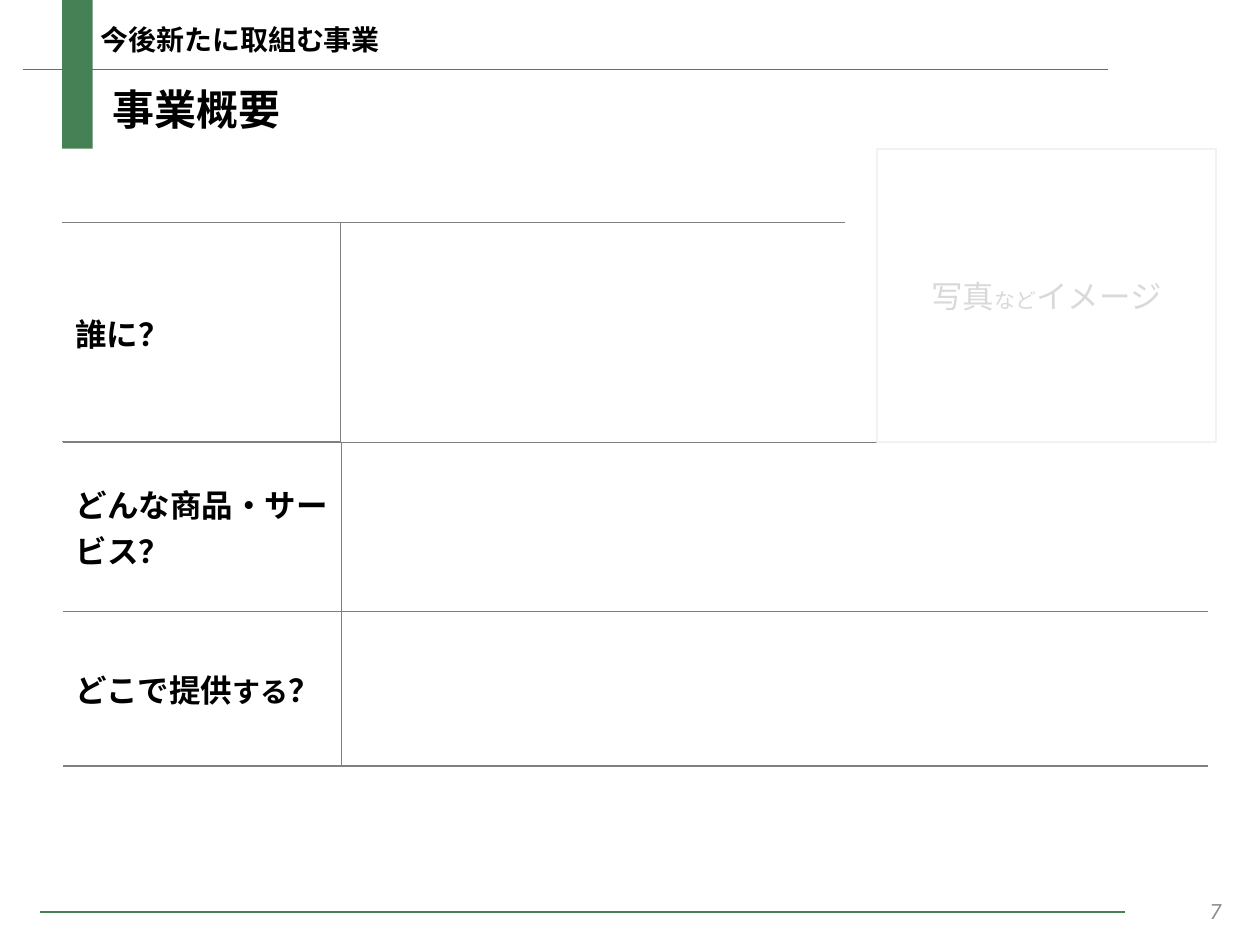
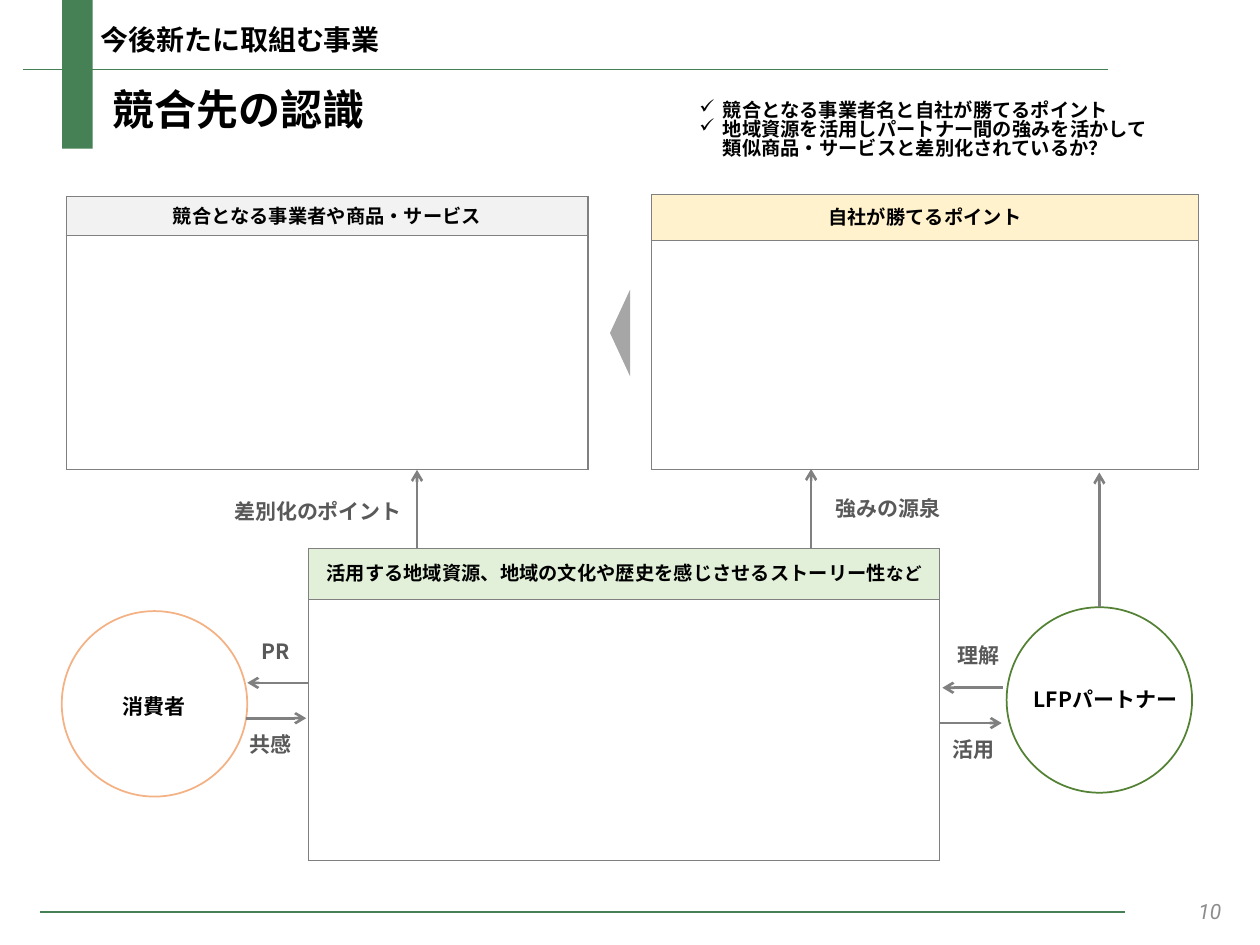
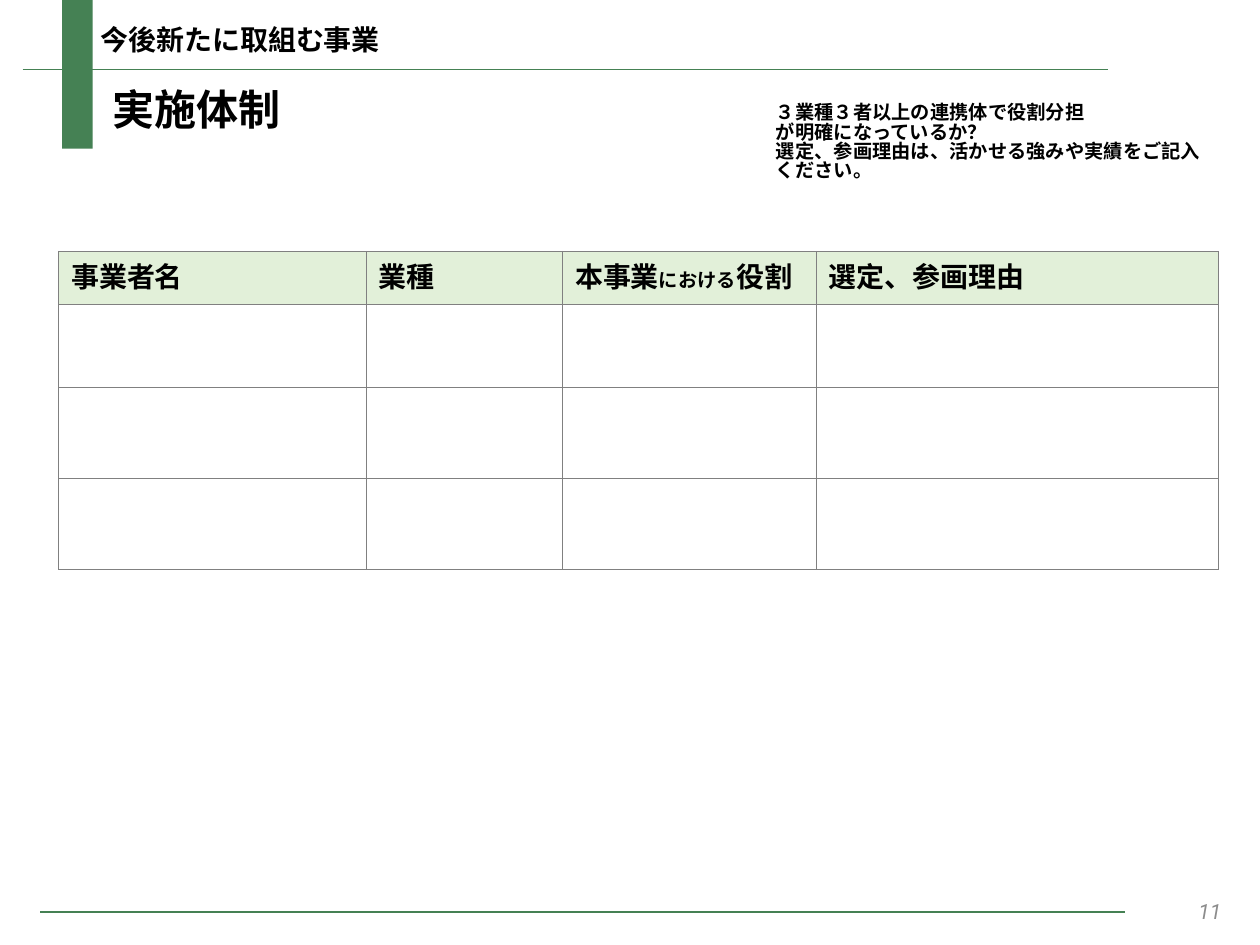
from dataclasses import dataclass
from typing import Any, NamedTuple

from lxml.etree import SubElement
from pptx import Presentation
from pptx.dml.color import RGBColor
from pptx.enum.shapes import MSO_CONNECTOR, MSO_SHAPE
from pptx.enum.text import MSO_ANCHOR, MSO_AUTO_SIZE, PP_ALIGN
from pptx.oxml.ns import qn
from pptx.util import Pt

COLORS = {
    "green": "458154",
    "pale_green": "E2F0D9",
    "pale_yellow": "FFF2CC",
    "pale_gray": "F2F2F2",
    "ghost": "D9D9D9",
    "arrowhead": "A6A6A6",
    "rule": "808080",
    "page": "8C8C8C",
    "label": "595959",
    "black": "000000",
    "consumer": "F4B183",
    "partner": "548235",
}
JP_FONT = "Noto Sans CJK JP"
TIGHT = 0.83
SECTION = "今後新たに取組む事業"
SIDES = {"l": "a:lnL", "r": "a:lnR", "t": "a:lnT", "b": "a:lnB"}


class Box(NamedTuple):
    left: float
    top: float
    width: float
    height: float


class Run(NamedTuple):
    text: str
    size: float


@dataclass
class Style:
    color: str = "black"
    font: str = JP_FONT
    bold: bool = True
    italic: bool = False
    align: Any = PP_ALIGN.LEFT
    spacing: float = TIGHT
    bullet: str = ""


@dataclass
class Label:
    box: Box
    paragraphs: list[list[Run]]
    style: Style


@dataclass
class Grid:
    left: float
    top: float
    cols: list[float]
    rows: list[float]
    texts: list[list[list[Run]]]
    borders: list[list[str]]
    style: Style
    header_fill: str = ""


class Arrow(NamedTuple):
    x1: float
    y1: float
    x2: float
    y2: float


def rgb(name: str) -> RGBColor:
    return RGBColor.from_string(COLORS[name])


def set_all(target: Any, values: dict[str, Any]) -> None:
    for name, value in values.items():
        setattr(target, name, value)


def write_paragraph(p: Any, runs: list[Run], style: Style) -> None:
    set_all(p, {"alignment": style.align, "line_spacing": style.spacing})
    if style.bullet:
        pPr = p._p.get_or_add_pPr()
        indent = Pt(13.5)
        pPr.set("marL", str(indent))
        pPr.set("indent", str(-indent))
        SubElement(pPr, qn("a:buChar")).set("char", style.bullet)
    for run in runs:
        r = p.add_run()
        r.text = run.text
        set_all(r.font, {"name": style.font, "size": Pt(run.size),
                         "bold": style.bold, "italic": style.italic})
        r.font.color.rgb = rgb(style.color)
        SubElement(r._r.get_or_add_rPr(), qn("a:ea")).set("typeface", style.font)


def write_text(tf: Any, paragraphs: list[list[Run]], style: Style) -> None:
    for i, runs in enumerate(paragraphs):
        p = tf.add_paragraph() if i else tf.paragraphs[0]
        write_paragraph(p, runs, style)


def add_label(s: Any, label: Label, anchor: Any = MSO_ANCHOR.TOP) -> None:
    tf = s.shapes.add_textbox(*map(Pt, label.box)).text_frame
    set_all(tf, {"word_wrap": True, "vertical_anchor": anchor,
                 "auto_size": MSO_AUTO_SIZE.NONE})
    write_text(tf, label.paragraphs, label.style)


def add_figure(s: Any, kind: Any, box: Box, fill: str = "", line: str = "") -> Any:
    sp = s.shapes.add_shape(kind, *map(Pt, box))
    sp.shadow.inherit = False
    if fill:
        sp.fill.solid()
        sp.fill.fore_color.rgb = rgb(fill)
    else:
        sp.fill.background()
    if line:
        sp.line.color.rgb = rgb(line)
        sp.line.width = Pt(1)
    else:
        sp.line.fill.background()
    return sp


def add_line(s: Any, ends: Arrow, color: str, width: float, arrow: bool = False) -> Any:
    c = s.shapes.add_connector(MSO_CONNECTOR.STRAIGHT, *map(Pt, ends))
    c.line.color.rgb = rgb(color)
    c.line.width = Pt(width)
    if arrow:
        SubElement(c.line._get_or_add_ln(), qn("a:tailEnd")).set("type", "arrow")
    SubElement(c._element.spPr, qn("a:effectLst"))
    return c


def set_borders(cell: Any, shown: str) -> None:
    tcPr = cell._tc.get_or_add_tcPr()
    for side, tag in SIDES.items():
        ln = SubElement(tcPr, qn(tag))
        ln.set("w", str(Pt(0.75)))
        if side in shown:
            fill = SubElement(ln, qn("a:solidFill"))
            SubElement(fill, qn("a:srgbClr")).set("val", COLORS["rule"])
        else:
            SubElement(ln, qn("a:noFill"))


def add_grid(s: Any, grid: Grid) -> None:
    box = Box(grid.left, grid.top, sum(grid.cols), sum(grid.rows))
    table = s.shapes.add_table(len(grid.rows), len(grid.cols), *map(Pt, box)).table
    set_all(table, {"first_row": False, "horz_banding": False})
    for col, width in zip(table.columns, grid.cols):
        col.width = Pt(width)
    for i, (row, height) in enumerate(zip(table.rows, grid.rows)):
        row.height = Pt(height)
        for j, cell in enumerate(row.cells):
            set_borders(cell, grid.borders[i][j])
            cell.vertical_anchor = MSO_ANCHOR.MIDDLE
            if grid.header_fill and i == 0:
                cell.fill.solid()
                cell.fill.fore_color.rgb = rgb(grid.header_fill)
            else:
                cell.fill.background()
            if i < len(grid.texts) and j < len(grid.texts[i]):
                write_text(cell.text_frame, [grid.texts[i][j]], grid.style)


def boxed(rows: int, cols: int) -> list[list[str]]:
    return [["lrtb"] * cols for _ in range(rows)]


def add_base(prs: Any, title: str, page: int) -> Any:
    s = prs.slides.add_slide(prs.slide_layouts[6])
    add_figure(s, MSO_SHAPE.RECTANGLE, Box(35.5, 0, 17.5, 85), fill="green")
    for left, y in ((13, 39.6), (23, 521.2)):
        add_line(s, Arrow(left, y, left + 620, y), "green", 0.75)
    number = Style("page", "Roboto", False, True, PP_ALIGN.RIGHT, 1)
    add_label(s, Label(Box(543, 506, 162, 29), [[Run(str(page), 12)]], number),
              MSO_ANCHOR.MIDDLE)
    add_label(s, Label(Box(50.5, 12.5, 271, 27), [[Run(SECTION, 16)]], Style()))
    add_label(s, Label(Box(57.5, 49, 236, 36), [[Run(title, 24)]], Style()))
    return s


def build_overview(prs: Any) -> None:
    s = add_base(prs, "事業概要", 7)
    style = Style(spacing=1)
    add_grid(s, Grid(36, 252.7, [159, 495.5], [96.5, 88.5],
                     [[[Run("どんな商品・サービス？", 18)]],
                      [[Run("どこで提供", 18), Run("する", 16), Run("？", 18)]]],
                     [["trb", "ltb"]] * 2, style))
    add_grid(s, Grid(35.7, 127.2, [159, 288], [125.3],
                     [[[Run("誰に？", 18)]]], [["trb", "lt"]], style))
    sp = add_figure(s, MSO_SHAPE.RECTANGLE, Box(501, 85, 194, 167.8), line="pale_gray")
    sp.text_frame.vertical_anchor = MSO_ANCHOR.MIDDLE
    write_text(sp.text_frame,
               [[Run("写真", 18), Run("など", 12), Run("イメージ", 18)]],
               Style("ghost", "Calibri", False, align=PP_ALIGN.CENTER, spacing=1))


def build_competitors(prs: Any) -> None:
    s = add_base(prs, "競合先の認識", 10)
    centred = Style(align=PP_ALIGN.CENTER)
    checks = ["競合となる事業者名と自社が勝てるポイント",
              "地域資源を活用しパートナー間の強みを活かして類似商品・サービスと差別化されているか？"]
    add_label(s, Label(Box(392.5, 54.7, 273.5, 47.5), [[Run(c, 11)] for c in checks],
                       Style(bullet="✓")))
    panels = [
        (Box(38, 112.5, 298, 155.7), 22.3, "pale_gray",
         [Run("競合となる事業者や商品・サービス", 11)]),
        (Box(372.2, 111.3, 312.8, 157), 26, "pale_yellow",
         [Run("自社が勝てるポイント", 11)]),
        (Box(176.3, 313.3, 360.7, 178.3), 29.3, "pale_green",
         [Run("活用する地域資源、地域の文化や歴史を感じさせるストーリー性", 11),
          Run("など", 10)]),
    ]
    for box, head, fill, runs in panels:
        add_grid(s, Grid(box.left, box.top, [box.width], [head, box.height - head],
                         [[runs]], boxed(2, 1), centred, fill))
    pointer = add_figure(s, MSO_SHAPE.ISOSCELES_TRIANGLE, Box(329.5, 184.5, 49.7, 11.5),
                         fill="arrowhead")
    pointer.rotation = 270

    names = [
        (Box(31.7, 389, 113, 27.4), "消費者", 1.25),
        (Box(575.3, 391, 113, 21.6), "LFPパートナー", TIGHT),
    ]
    for box, name, spacing in names:
        add_label(s, Label(box, [[Run(name, 12)]],
                           Style(align=PP_ALIGN.CENTER, spacing=spacing)))
    add_figure(s, MSO_SHAPE.OVAL, Box(35.3, 349.2, 106, 106), line="consumer")
    partner = add_figure(s, MSO_SHAPE.OVAL, Box(575.2, 347, 106, 106), line="partner")

    arrows = [
        Arrow(463.5, 313.3, 463.5, 268),
        Arrow(238.3, 313.3, 238.3, 268.5),
        Arrow(176.3, 390.2, 141.3, 390.2),
        Arrow(140.4, 410.4, 175, 410.4),
        Arrow(573.1, 393, 538.5, 393),
        Arrow(537, 413.2, 572.4, 413.2),
    ]
    for arrow in arrows:
        add_line(s, arrow, "rule", 1.5, True)
    rise = add_line(s, Arrow(628.2, 347, 628.2, 270), "rule", 1.5, True)
    rise.begin_connect(partner, 0)

    labels = [
        (470.2, 282.2, 80.6, "強みの源泉"),
        (126.7, 283.7, 113, "差別化のポイント"),
        (142.5, 363.6, 34.6, "PR"),
        (135.4, 416.9, 39.6, "共感"),
        (540, 365.8, 39.6, "理解"),
        (537.2, 419.8, 39.6, "活用"),
    ]
    for left, top, width, text in labels:
        add_label(s, Label(Box(left, top, width, 21.6), [[Run(text, 12)]], Style("label")))


def build_team(prs: Any) -> None:
    s = add_base(prs, "実施体制", 11)
    header = [
        [Run("事業者名", 16)],
        [Run("業種", 16)],
        [Run("本事業", 16), Run("における", 11), Run("役割", 16)],
        [Run("選定、参画理由", 16)],
    ]
    add_grid(s, Grid(33.5, 143.7, [175.7, 112.3, 145, 229.6], [30.2, 47.5, 52, 52],
                     [header], boxed(4, 4), Style(), "pale_green"))
    notes = ["３業種３者以上の連携体で役割分担",
             "が明確になっているか？",
             "選定、参画理由は、活かせる強みや実績をご記入ください。"]
    add_label(s, Label(Box(436.3, 56.2, 260, 60.5), [[Run(n, 11)] for n in notes], Style()))


def main() -> None:
    prs = Presentation()
    set_all(prs, {"slide_width": Pt(720), "slide_height": Pt(540)})
    for build in (build_overview, build_competitors, build_team):
        build(prs)
    prs.save("out.pptx")


if __name__ == "__main__":
    main()
